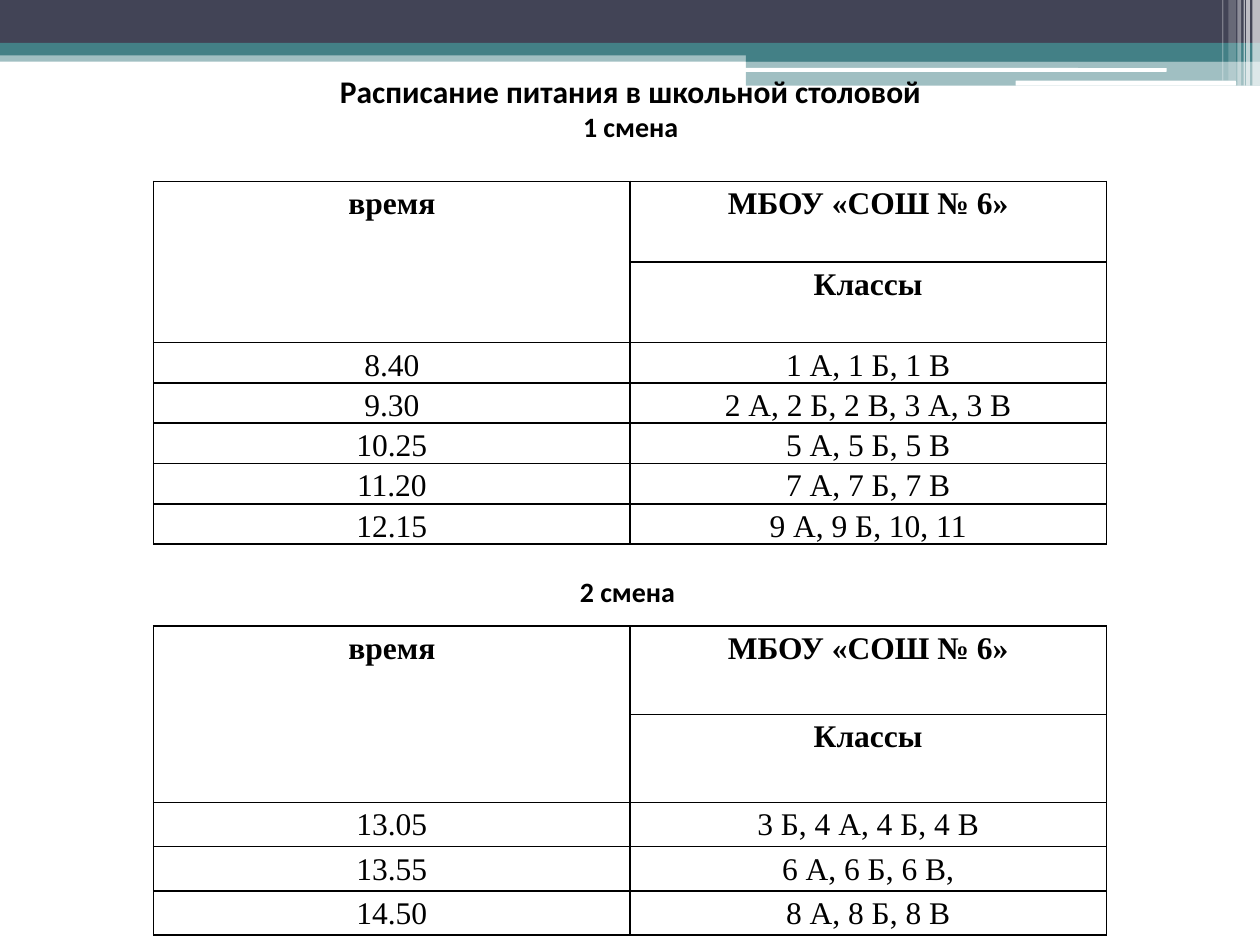
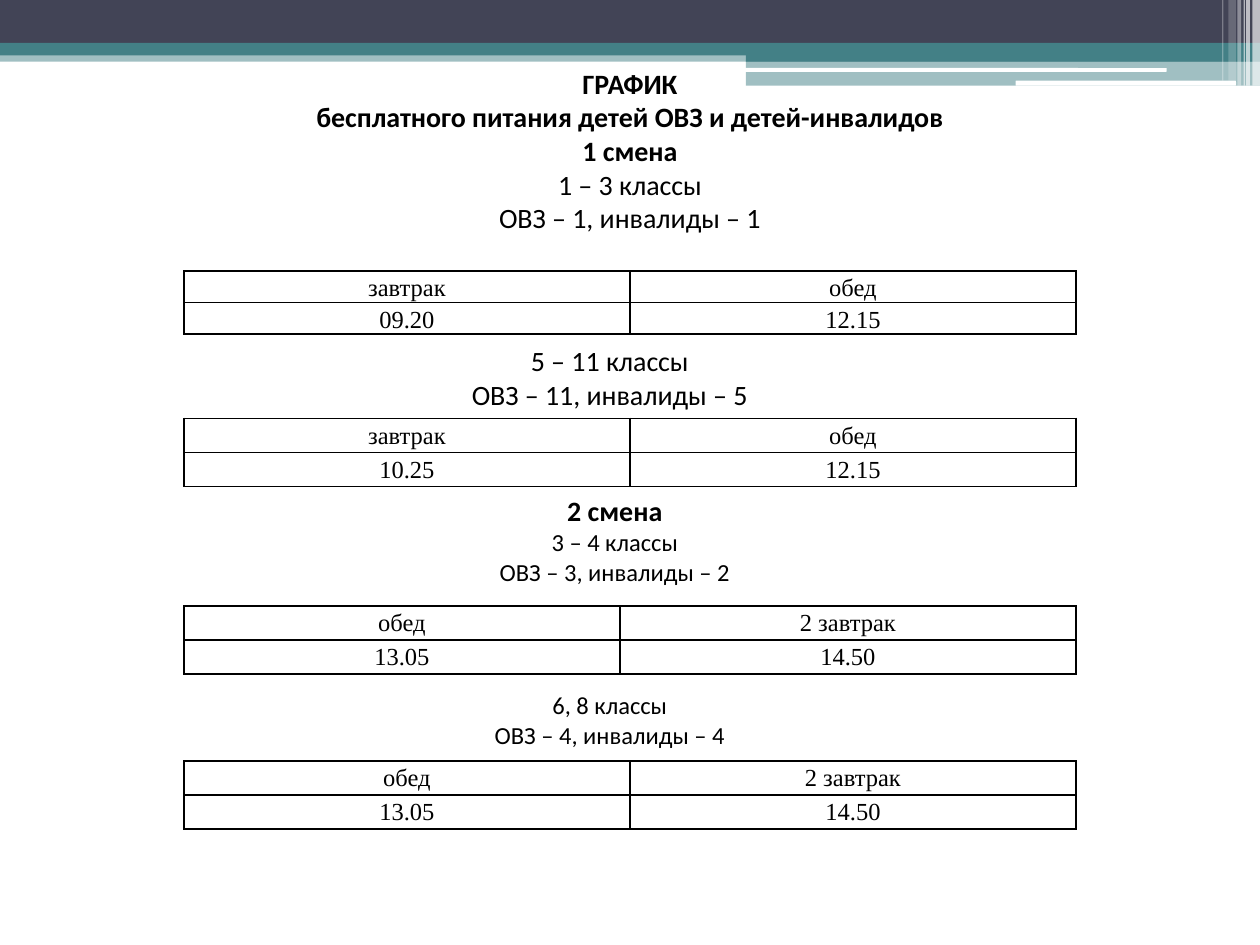
from lxml.etree import SubElement
from pptx import Presentation
from pptx.dml.color import RGBColor
from pptx.enum.shapes import MSO_SHAPE
from pptx.enum.text import MSO_ANCHOR, MSO_AUTO_SIZE, PP_ALIGN
from pptx.oxml.ns import qn
from pptx.util import Inches, Pt

COLORS = {"navy": "424456", "teal": "438086", "white": "FFFFFF", "black": "000000"}
HEADING_FONT = "Calibri"
TABLE_FONT = "Times New Roman"

BANDS = [
    (0, 0.4, 10, 0.09, "teal", 50),
    (0, 0, 10, 0.34, "navy", 100),
    (0, 0.34, 10, 0.1, "teal", 100),
    (5.92, 0.39, 4.08, 0.1, "teal", 100),
    (5.92, 0.48, 4.08, 0.2, "teal", 50),
]
WHITE_BARS = [(5.91, 0.54, 3.35, 0.03), (8.06, 0.64, 1.75, 0.04)]
STRIPES = [
    (9.94, 0.06, 0.68, 65),
    (9.89, 0.03, 0.68, 65),
    (9.87, 0.01, 0.68, 60),
    (9.82, 0.03, 0.68, 40),
    (9.75, 0.06, 0.64, 20),
    (9.7, 0.01, 0.64, 30),
]

SHIFT_1 = [
    ("8.40", "1 А, 1 Б, 1 В"),
    ("9.30", "2 А, 2 Б, 2 В, 3 А, 3 В"),
    ("10.25", "5 А, 5 Б, 5 В"),
    ("11.20", "7 А, 7 Б, 7 В"),
    ("12.15", "9 А, 9 Б, 10, 11"),
]
SHIFT_2 = [
    ("13.05", "3 Б, 4 А, 4 Б, 4 В"),
    ("13.55", "6 А, 6 Б, 6 В,"),
    ("14.50", "8 А, 8 Б, 8 В"),
]
MORNING = ("завтрак", "обед")
AFTERNOON = ("обед", "2 завтрак")


def rgb(name):
    return RGBColor.from_string(COLORS[name])


def write(p, text, size=16, bold=False, font=HEADING_FONT, spacing=None):
    p.alignment = PP_ALIGN.CENTER
    if spacing:
        p.line_spacing = spacing
    r = p.add_run()
    r.text = text
    r.font.name = font
    r.font.size = Pt(size)
    r.font.bold = bold
    r.font.color.rgb = rgb("black")


def write_lines(tf, lines):
    for i, (text, size, bold) in enumerate(lines):
        p = tf.add_paragraph() if i else tf.paragraphs[0]
        write(p, text, size=size, bold=bold)


def add_bar(s, box, color, opacity=100, shape=MSO_SHAPE.RECTANGLE):
    sp = s.shapes.add_shape(shape, *map(Inches, box))
    sp.shadow.inherit = False
    sp.fill.solid()
    sp.fill.fore_color.rgb = rgb(color)
    sp.line.fill.background()
    if opacity < 100:
        clr = sp.element.find(".//" + qn("a:srgbClr"))
        SubElement(clr, qn("a:alpha"), val=str(opacity * 1000))
    return sp


def decorate_layout(layout, s):
    bars = [add_bar(s, band[:4], *band[4:]) for band in BANDS]
    bars += [add_bar(s, box, "white", shape=MSO_SHAPE.ROUNDED_RECTANGLE) for box in WHITE_BARS]
    bars += [add_bar(s, (x, 0, w, h), "white", opacity) for x, w, h, opacity in STRIPES]
    for i, sp in enumerate(bars):
        sp.element.nvSpPr.cNvPr.set("id", str(100 + i))
        layout.shapes.element.append(sp.element)


def set_title(s, box, lines):
    title = s.shapes.title
    title.left, title.top, title.width, title.height = map(Inches, box)
    tf = title.text_frame
    tf.auto_size = MSO_AUTO_SIZE.NONE
    tf.vertical_anchor = MSO_ANCHOR.BOTTOM
    tf.word_wrap = False
    write_lines(tf, lines)


def add_caption(s, box, lines):
    tf = s.shapes.add_textbox(*map(Inches, box)).text_frame
    tf.word_wrap = True
    write_lines(tf, lines)


def format_cell(cell):
    cell.margin_left = cell.margin_right = Inches(0.07)
    cell.margin_top = cell.margin_bottom = 0
    tcPr = cell._tc.get_or_add_tcPr()
    for side in ("lnL", "lnR", "lnT", "lnB"):
        ln = SubElement(tcPr, qn(f"a:{side}"), w=str(Pt(1)))
        fill = SubElement(ln, qn("a:solidFill"))
        SubElement(fill, qn("a:srgbClr"), val=COLORS["black"])
    cell.fill.background()


def add_table(s, left, top, widths, heights, rows, size, header_rows=0):
    frame = s.shapes.add_table(
        len(rows), len(widths), Inches(left), Inches(top),
        Inches(sum(widths)), Inches(sum(heights)))
    table = frame.table
    table.first_row = table.horz_banding = False
    for col, width in zip(table.columns, widths):
        col.width = Inches(width)
    for i, (row, height) in enumerate(zip(rows, heights)):
        table.rows[i].height = Inches(height)
        for j, text in enumerate(row):
            cell = table.cell(i, j)
            format_cell(cell)
            if text:
                write(cell.text_frame.paragraphs[0], text, size=size,
                      bold=i < header_rows, font=TABLE_FONT, spacing=1.15)
    return table


def add_shift_table(s, top, row_height, meals):
    rows = [("время", "МБОУ «СОШ № 6»"), ("", "Классы")] + meals
    heights = [2 * row_height] * 2 + [row_height] * len(meals)
    table = add_table(s, 1.22, top, (3.78, 3.78), heights, rows, 18, header_rows=2)
    table.cell(0, 0).merge(table.cell(1, 0))


def add_meal_table(s, top, names, times, row_height=0.27, widths=(3.54, 3.54)):
    add_table(s, 1.46, top, widths, [row_height] * 2, [names, times], 14)


def fill_canteen_slide(s):
    set_title(s, (2.58, 0.51, 4.85, 0.68), [
        ("Расписание питания в школьной столовой", 18, True),
        ("1 смена", 16, True),
    ])
    add_shift_table(s, 1.44, 0.32, SHIFT_1)
    add_caption(s, (4.23, 4.51, 1.5, 0.37), [("2 смена", 16, True)])
    add_shift_table(s, 4.97, 0.35, SHIFT_2)


def fill_free_meals_slide(s):
    set_title(s, (2.38, 0.46, 5.24, 1.45), [
        ("ГРАФИК", 16, True),
        ("бесплатного питания детей ОВЗ и детей-инвалидов", 16, True),
        ("1 смена", 16, True),
        ("1 – 3 классы", 16, False),
        ("ОВЗ – 1, инвалиды – 1", 16, False),
    ])
    add_meal_table(s, 2.15, MORNING, ("09.20", "12.15"), row_height=0.25)
    add_caption(s, (2.56, 2.68, 4.56, 0.64), [
        ("5 – 11 классы", 16, False),
        ("ОВЗ – 11, инвалиды – 5", 16, False),
    ])
    add_meal_table(s, 3.32, MORNING, ("10.25", "12.15"))
    add_caption(s, (2.38, 3.87, 5, 0.84), [
        ("2 смена", 16, True),
        ("3 – 4 классы", 14, False),
        ("ОВЗ – 3, инвалиды – 2", 14, False),
    ])
    add_meal_table(s, 4.81, AFTERNOON, ("13.05", "14.50"), widths=(3.46, 3.62))
    add_caption(s, (2.34, 5.43, 5, 0.57), [
        ("6, 8 классы", 14, False),
        ("ОВЗ – 4, инвалиды – 4", 14, False),
    ])
    add_meal_table(s, 6.04, AFTERNOON, ("13.05", "14.50"))


def main():
    prs = Presentation()
    prs.slide_width, prs.slide_height = Inches(10), Inches(7.5)
    layout = prs.slide_layouts[5]
    canteen = prs.slides.add_slide(layout)
    decorate_layout(layout, canteen)
    fill_canteen_slide(canteen)
    fill_free_meals_slide(prs.slides.add_slide(layout))
    prs.save("out.pptx")


if __name__ == "__main__":
    main()
